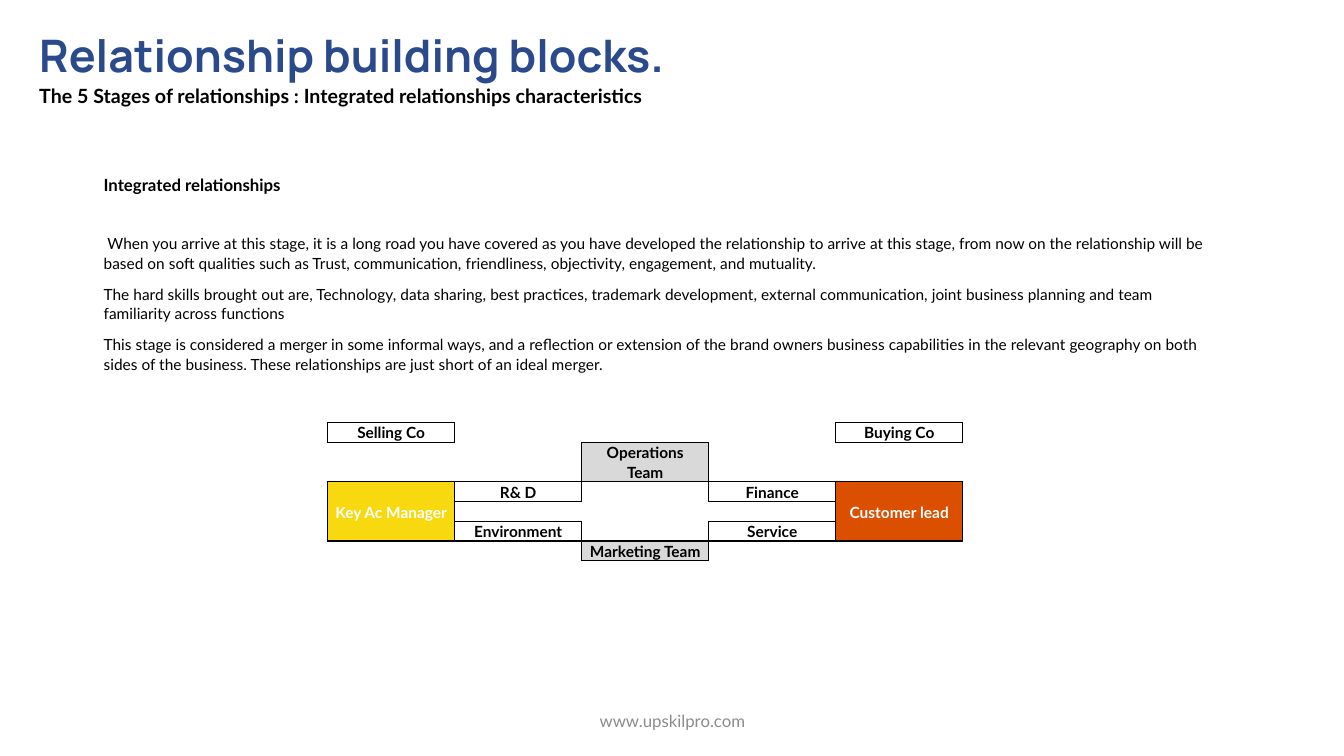
from lxml import etree
from pptx import Presentation
from pptx import util as u
from pptx.dml.color import RGBColor
from pptx.enum import text
from pptx.oxml.ns import qn

COLORS = dict(title="2A4A8B", ink="000000", footer="8C8C8C", white="FFFFFF",
              team="D9D9D9", seller="F8D90F", buyer="DB5000")

TITLE = ("Relationship building blocks.", 32, "Manrope", "title", True)
SUBTITLE = ("The 5 Stages of relationships : Integrated relationships characteristics",
            14, "Lato", "ink", True)
HEADING = ("Integrated relationships", 12, "Lato", "ink", True)
BODY = [(t, 11, "Lato", "ink", False) for t in (
    "\N{NO-BREAK SPACE}When you arrive at this stage, it is a long road you have covered as you have "
    "developed the relationship to arrive at this stage, from now on the relationship will be based on "
    "soft qualities such as Trust, communication, friendliness, objectivity, engagement, and mutuality.",
    "The hard skills brought out are, Technology, data sharing, best practices, trademark development, "
    "external communication, joint business planning and team familiarity across functions",
    "This stage is considered a merger in some informal ways, and a reflection or extension of the brand "
    "owners business capabilities in the relevant geography on both sides of the business. These "
    "relationships are just short of an ideal merger.")]
FOOTER = ("www.upskilpro.com", 12, "Lato", "footer", False)

# (row, column): label, fill, font colour, rows spanned
BLOCKS = {
    (0, 0): ("Selling Co", None, "ink", 1),
    (0, 4): ("Buying Co", None, "ink", 1),
    (1, 2): ("Operations Team", "team", "ink", 1),
    (2, 0): ("Key Ac Manager", "seller", "white", 3),
    (2, 1): ("R& D", None, "ink", 1),
    (2, 3): ("Finance", None, "ink", 1),
    (2, 4): ("Customer lead", "buyer", "white", 3),
    (4, 1): ("Environment", None, "ink", 1),
    (4, 3): ("Service", None, "ink", 1),
    (5, 2): ("Marketing Team", "team", "ink", 1),
}
ROWS, COLS = 6, 5
COL_W, ROW_H = 1.26, 0.196
SIDES = {"a:lnL": (0, -1), "a:lnR": (0, 1), "a:lnT": (-1, 0), "a:lnB": (1, 0)}


def rgb(name):
    return RGBColor.from_string(COLORS[name])


def style(p, size, font, color, bold):
    p.font.size, p.font.name, p.font.bold = u.Pt(size), font, bold
    p.font.color.rgb = rgb(color)


def add_text(slide, box, paragraphs, spaced=True, centred=False):
    tf = slide.shapes.add_textbox(*map(u.Inches, box)).text_frame
    tf.word_wrap = True
    if centred:
        tf.vertical_anchor = text.MSO_ANCHOR.MIDDLE
    for i, (words, *look) in enumerate(paragraphs):
        p = tf.paragraphs[0] if i == 0 else tf.add_paragraph()
        p.text = words
        if centred:
            p.alignment = text.PP_ALIGN.CENTER
        if spaced or i:
            p.line_spacing, p.space_after = 1.07, u.Pt(8)
        style(p, *look)


def add_borders(cell, row, col, taken):
    """Draw each edge that touches a block; clear the others."""
    tcPr = cell._tc.get_or_add_tcPr()
    for i, (tag, (dr, dc)) in enumerate(SIDES.items()):
        drawn = (row, col) in taken or (row + dr, col + dc) in taken
        ln = etree.Element(qn(tag), w=str(u.Pt(1)))
        fill = etree.SubElement(ln, qn("a:solidFill" if drawn else "a:noFill"))
        if drawn:
            etree.SubElement(fill, qn("a:srgbClr"), val=COLORS["ink"])
        tcPr.insert(i, ln)


def add_block_table(slide):
    taken = {(r + k, c) for (r, c), block in BLOCKS.items() for k in range(block[3])}
    table = slide.shapes.add_table(ROWS, COLS, u.Inches(3.25), u.Inches(4.19), u.Inches(COLS * COL_W),
                                   u.Inches((ROWS + 1) * ROW_H)).table
    table.first_row = table.horz_banding = False
    for col in table.columns:
        col.width = u.Inches(COL_W)
    for r, row in enumerate(table.rows):
        row.height = u.Inches(ROW_H * (2 if r == 1 else 1))  # two-line label
        for c in range(COLS):
            label, fill, color, span = BLOCKS.get((r, c), ("", None, "ink", 1))
            cell = table.cell(r, c)
            cell.margin_left = cell.margin_right = u.Inches(0.07)
            cell.margin_top = cell.margin_bottom = 0
            cell.vertical_anchor = text.MSO_ANCHOR.MIDDLE
            if fill:
                cell.fill.solid()
                cell.fill.fore_color.rgb = rgb(fill)
            else:
                cell.fill.background()
            add_borders(cell, r, c, taken)
            p = cell.text_frame.paragraphs[0]
            p.alignment, p.line_spacing = text.PP_ALIGN.CENTER, 1.07
            if label:
                p.text = label
                style(p, 11, "Lato", color, True)
            else:  # keeps empty rows low
                etree.SubElement(p._p, qn("a:endParaRPr"), sz="800")
            if span > 1:
                cell.merge(table.cell(r + span - 1, c))


def main():
    prs = Presentation()
    prs.slide_width, prs.slide_height = u.Inches(13.33), u.Inches(7.5)
    slide = prs.slides.add_slide(prs.slide_layouts[6])
    # Title and footer
    add_text(slide, (0.29, 0.23, 7.01, 0.88), [TITLE, SUBTITLE], spaced=False)
    add_text(slide, (4.42, 6.95, 4.5, 0.4), [FOOTER], spaced=False, centred=True)
    # Description
    add_text(slide, (0.93, 1.67, 6.67, 0.31), [HEADING])
    add_text(slide, (0.93, 2.26, 11.12, 1.5), BODY)
    # Relationship blocks
    add_block_table(slide)
    prs.save("out.pptx")


if __name__ == "__main__":
    main()
